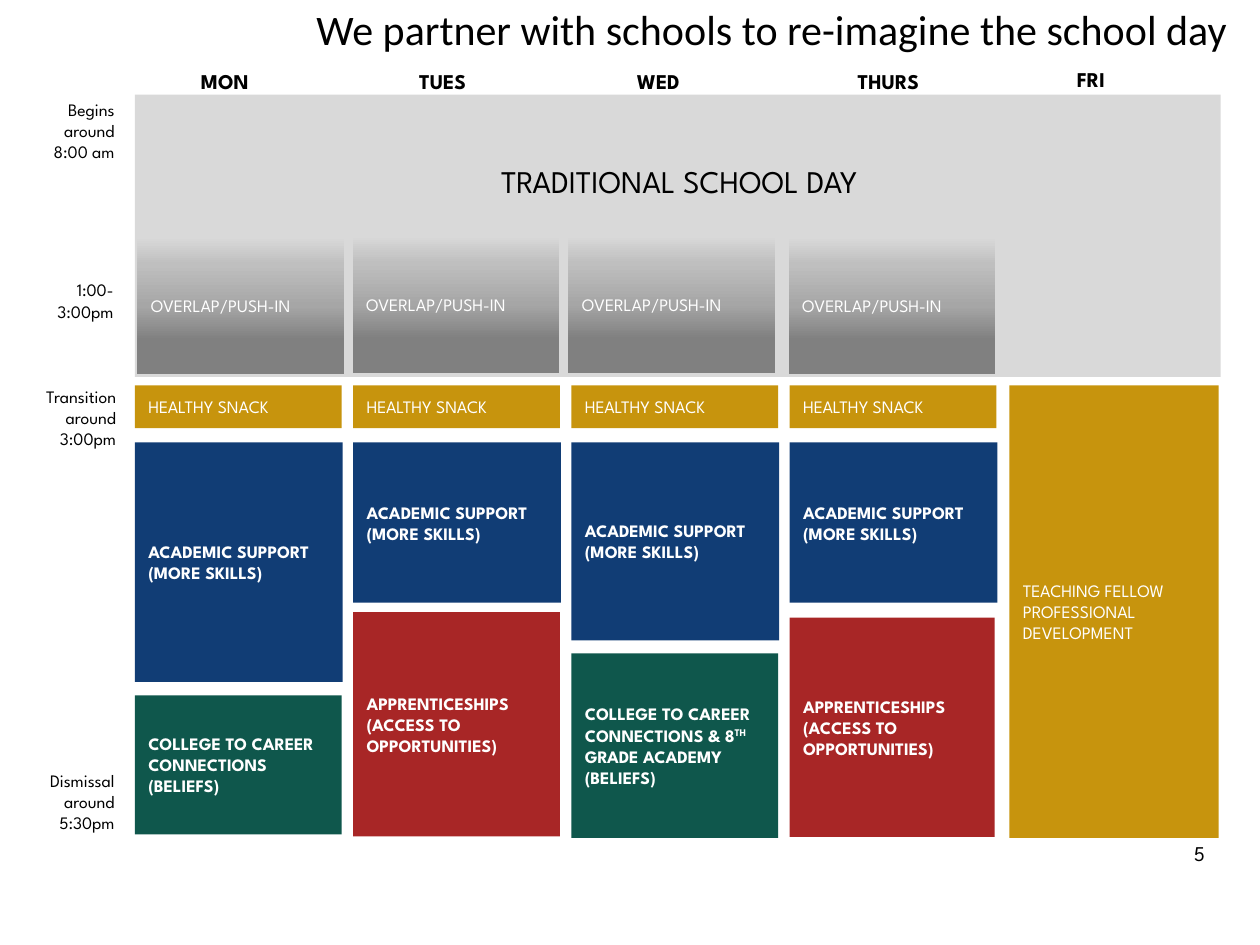
"""Build a weekly timetable slide for a re-imagined school day."""
import pptx
import pptx.util
import pptx.dml.color
import pptx.enum.shapes
import pptx.enum.text
import pptx.oxml
import pptx.oxml.ns

Cm = pptx.util.Cm
Color = pptx.dml.color.RGBColor
Align = pptx.enum.text.PP_ALIGN
Anchor = pptx.enum.text.MSO_ANCHOR

BLACK = Color(0x00, 0x00, 0x00)
WHITE = Color(0xFF, 0xFF, 0xFF)
GREY = Color(0xD9, 0xD9, 0xD9)
GOLD = Color(0xC7, 0x94, 0x0D)
BLUE = Color(0x11, 0x3D, 0x75)
GREEN = Color(0x0F, 0x57, 0x4C)
RED = Color(0xA8, 0x26, 0x26)
FADE = [(0, "D9D9D9"), (20, "BFBFBF"), (50, "A6A6A6"), (75, "808080"), (100, "808080")]
FONT = "League Spartan"


def style(frame, size, color, align=Align.LEFT, bold=False, anchor=Anchor.MIDDLE, face=FONT):
    frame.word_wrap = True
    frame.auto_size = pptx.enum.text.MSO_AUTO_SIZE.NONE
    frame.vertical_anchor = anchor
    for para in frame.paragraphs:
        para.alignment = align
        for run in para.runs:
            run.font.name = face
            run.font.size = pptx.util.Pt(size)
            run.font.bold = bold
            run.font.color.rgb = color


def block(left, top, width, height, color, text="", bold=False):
    box = slide.shapes.add_shape(
        pptx.enum.shapes.MSO_SHAPE.RECTANGLE, Cm(left), Cm(top), Cm(width), Cm(height))
    box.shadow.inherit = False
    box.fill.solid()
    box.fill.fore_color.rgb = color
    box.line.fill.background()
    box.text_frame.margin_left = box.text_frame.margin_right = Cm(0.27)
    box.text_frame.text = text
    style(box.text_frame, 10, WHITE, bold=bold)
    return box


deck = pptx.Presentation()
deck.slide_width = Cm(25.4)
deck.slide_height = Cm(19.05)
slide = deck.slides.add_slide(deck.slide_layouts[5])

title = slide.shapes.title
title.left, title.top, title.width, title.height = Cm(5.51), Cm(0), Cm(19.48), Cm(1.22)
title.text_frame.text = "We partner with schools to re-imagine the school day"
style(title.text_frame, 24, BLACK, Align.RIGHT, anchor=Anchor.BOTTOM, face="Calibri")

days = [("MON", 3.78, 1.17), ("TUES", 8.18, 1.17), ("WED", 12.57, 1.17),
        ("THURS", 17.02, 1.17), ("FRI", 21.44, 1.14)]
for day, left, top in days:
    head = slide.shapes.add_textbox(Cm(left), Cm(top), Cm(3.6), Cm(0.93))
    head.text_frame.margin_left = Cm(0.27)
    head.text_frame.text = day
    style(head.text_frame, 12, BLACK, bold=True)

cols = [2.72 + 4.4 * i for i in range(4)]
for left in cols:
    block(left, 7.77, 4.17, 0.86, GOLD, "HEALTHY SNACK")
for left, height in zip(cols, [4.83, 3.23, 3.99, 3.23]):
    block(left, 8.92, 4.19, height, BLUE, "ACADEMIC SUPPORT (MORE SKILLS)", True)

skills = "APPRENTICESHIPS (ACCESS TO OPPORTUNITIES)"
block(cols[1], 12.34, 4.17, 4.52, RED, skills, True)
block(cols[3], 12.45, 4.13, 4.42, RED, skills, True)
block(cols[0], 14.02, 4.17, 2.8, GREEN, "COLLEGE TO CAREER CONNECTIONS (BELIEFS)", True)
block(20.35, 7.77, 4.22, 9.12, GOLD, "TEACHING FELLOW\nPROFESSIONAL\nDEVELOPMENT")

career = block(cols[2], 13.17, 4.17, 3.72, GREEN, "COLLEGE TO CAREER CONNECTIONS & 8")
para = career.text_frame.paragraphs[0]
for text in ["TH", " GRADE ACADEMY (BELIEFS)"]:
    para.add_run().text = text
style(career.text_frame, 10, WHITE, bold=True)
para.runs[1].font._element.set("baseline", "30000")

block(2.72, 1.91, 21.89, 5.69, GREY)
for left, top in [(2.77, 4.78), (7.11, 4.75), (11.46, 4.75), (15.9, 4.78)]:
    box = block(left, top, 4.17, 2.77, GREY, "OVERLAP/PUSH-IN")
    box.fill.gradient()
    box.fill.gradient_angle = 270
    stops = box._element.spPr.find(".//" + pptx.oxml.ns.qn("a:gsLst"))
    stops.clear()
    for place, shade in FADE:
        stops.append(pptx.oxml.parse_xml(
            f'<a:gs {pptx.oxml.ns.nsdecls("a")} pos="{place * 1000}">'
            f'<a:srgbClr val="{shade}"/></a:gs>'))

notes = [
    ("Begins around 8:00 am", 0.43, 1.88, 2.13, 1.55, 10, Align.RIGHT),
    ("1:00-3:00pm", 0.41, 5.51, 2.13, 1.12, 10, Align.RIGHT),
    ("Transition around 3:00pm", 0.46, 7.65, 2.13, 1.55, 10, Align.RIGHT),
    ("Dismissal around 5:30pm", 0.43, 15.39, 2.13, 1.55, 10, Align.RIGHT),
    ("TRADITIONAL SCHOOL DAY", 5.54, 3.15, 16.31, 1.02, 18, Align.CENTER),
    ("5", 18.62, 16.81, 5.92, 1.02, 12, Align.RIGHT),
]
for text, left, top, width, height, size, align in notes:
    note = slide.shapes.add_textbox(Cm(left), Cm(top), Cm(width), Cm(height))
    note.text_frame.text = text
    style(note.text_frame, size, BLACK, align, anchor=Anchor.TOP)

deck.save("out.pptx")
